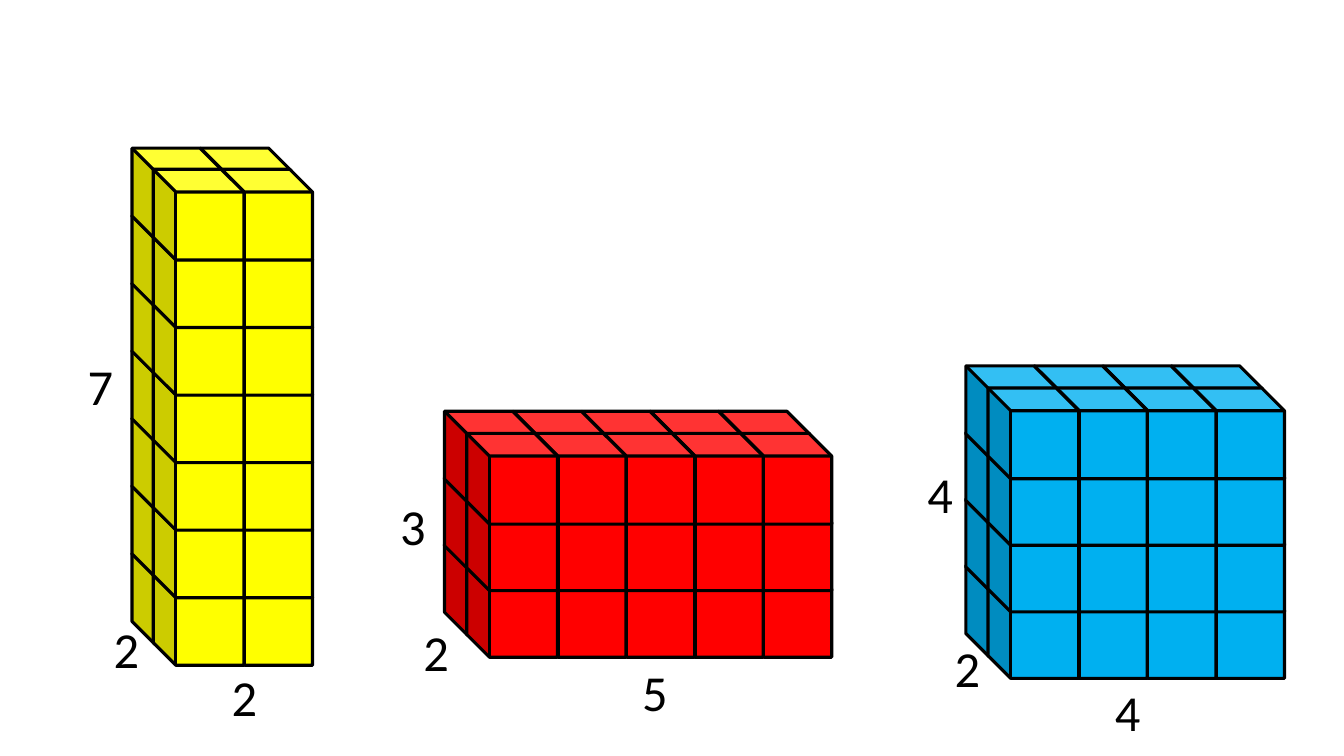
"""Build a slide of three cuboids made of unit cubes, labelled with their dimensions."""
import pptx
import pptx.dml.color
import pptx.enum.shapes
import pptx.enum.text
import pptx.util
from pptx.util import Inches

COLORS = {"yellow": "FFFF00", "blue": "00B0F0", "red": "FF0000", "black": "000000"}
FONT = "Calibri"
CUBE_SIZE = 0.9
COLUMN_STEP = 0.68
LABEL_SIZE = (0.67, 0.71)

CUBOIDS = [
    {"color": "yellow", "columns": 2, "rows": 7, "layers": 2,
     "corner": (1.31, 1.47), "row_step": 0.67, "depth_step": 0.21,
     "labels": [("7", 0.77, 3.47), ("2", 1.03, 6.08), ("2", 2.2, 6.56)]},
    {"color": "blue", "columns": 4, "rows": 4, "layers": 2,
     "corner": (9.58, 3.63), "row_step": 0.66, "depth_step": 0.22,
     "labels": [("4", 9.1, 4.54), ("2", 9.37, 6.27), ("4", 10.96, 6.71)]},
    {"color": "red", "columns": 5, "rows": 3, "layers": 2,
     "corner": (4.41, 4.08), "row_step": 0.66, "depth_step": 0.22,
     "labels": [("3", 3.87, 4.86), ("2", 4.1, 6.11), ("5", 6.27, 6.51)]},
]


def rgb(name):
    return pptx.dml.color.RGBColor.from_string(COLORS[name])


def add_label(group, text, left, top):
    box = group.shapes.add_textbox(Inches(left), Inches(top), *map(Inches, LABEL_SIZE))
    frame = box.text_frame
    frame.word_wrap = True
    frame.auto_size = pptx.enum.text.MSO_AUTO_SIZE.SHAPE_TO_FIT_TEXT
    run = frame.paragraphs[0].add_run()
    run.text = text
    run.font.name = FONT
    run.font.size = pptx.util.Pt(36)
    run.font.color.rgb = rgb("black")


def add_cube(group, left, top, color):
    cube = group.shapes.add_shape(
        pptx.enum.shapes.MSO_SHAPE.CUBE,
        Inches(left), Inches(top), Inches(CUBE_SIZE), Inches(CUBE_SIZE))
    cube.element.spPr.xfrm.set("flipH", "1")
    cube.shadow.inherit = False
    cube.fill.solid()
    cube.fill.fore_color.rgb = rgb(color)
    cube.line.color.rgb = rgb("black")
    cube.line.width = pptx.util.Pt(2.25)


def add_cuboid(slide, cuboid):
    group = slide.shapes.add_group_shape()
    for label in cuboid["labels"]:
        add_label(group, *label)
    left, top = cuboid["corner"]
    for row in reversed(range(cuboid["rows"])):
        for layer in range(cuboid["layers"]):
            offset = layer * cuboid["depth_step"]
            for column in reversed(range(cuboid["columns"])):
                add_cube(group, left + column * COLUMN_STEP + offset,
                         top + row * cuboid["row_step"] + offset, cuboid["color"])


def main():
    presentation = pptx.Presentation()
    presentation.slide_width = Inches(13.33)
    presentation.slide_height = Inches(7.5)
    slide = presentation.slides.add_slide(presentation.slide_layouts[6])
    for cuboid in CUBOIDS:
        add_cuboid(slide, cuboid)
    presentation.save("out.pptx")


if __name__ == "__main__":
    main()
